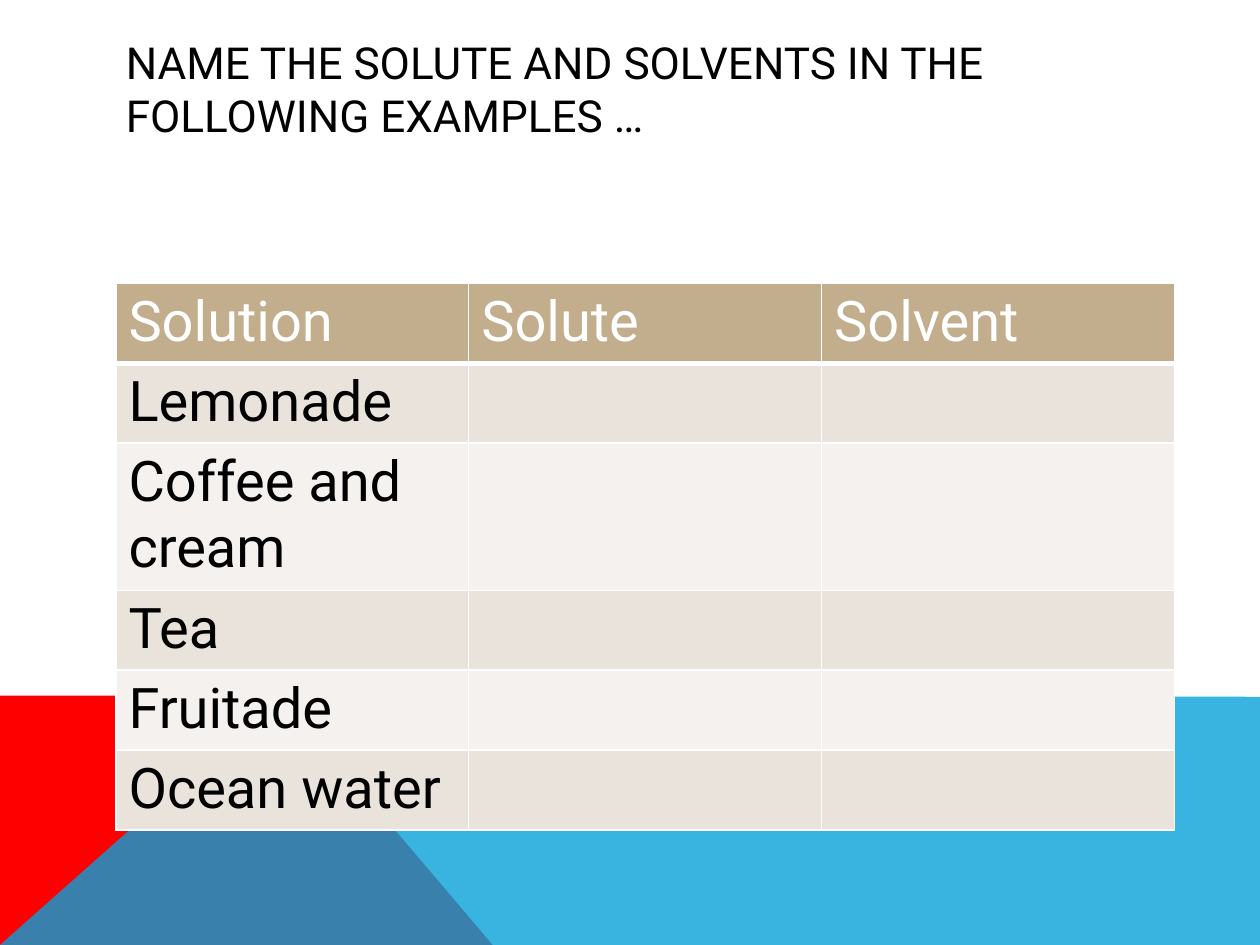
from lxml import etree
from pptx import Presentation
from pptx.dml.color import RGBColor
from pptx.enum.text import MSO_ANCHOR
from pptx.oxml.ns import qn
from pptx.util import Inches, Pt

FONT = "Roboto"
SOLUTIONS = ["Lemonade", "Coffee and cream", "Tea", "Fruitade", "Ocean water"]


def paint(color_format, hex_color):
    color_format.rgb = RGBColor.from_string(hex_color)


def style_text(text_frame, size, hex_color):
    for paragraph in text_frame.paragraphs:
        for run in paragraph.runs:
            run.font.name = FONT
            run.font.size = Pt(size)
            paint(run.font.color, hex_color)


def add_panel(slide, left, top, points, hex_color, opacity=None):
    """Draw a filled polygon; points are relative to left and top."""
    corners = [(Inches(left + x), Inches(top + y)) for x, y in points]
    builder = slide.shapes.build_freeform(*corners[0])
    builder.add_line_segments(corners[1:], close=True)
    panel = builder.convert_to_shape()
    panel.shadow.inherit = False
    panel.line.fill.background()
    panel.fill.solid()
    paint(panel.fill.fore_color, hex_color)
    if opacity is not None:
        color = panel.fill._xPr.find(".//" + qn("a:srgbClr"))
        etree.SubElement(color, qn("a:alpha"), val=str(opacity * 1000))


def add_footer_band(slide, left, top, width, height):
    fold = 2.23
    add_panel(slide, left, top,
              [(0, height), (0, 0), (fold, 0), (3.91, height)], "FF0000")
    add_panel(slide, left, top,
              [(0, height), (fold, 0), (width, 0.01), (width, height)],
              "08A1D9", opacity=80)


def add_title(slide, left, top, width, height):
    title = slide.shapes.add_textbox(
        Inches(left), Inches(top), Inches(width), Inches(height)).text_frame
    title.word_wrap = True
    title.vertical_anchor = MSO_ANCHOR.MIDDLE
    title.text = "NAME THE SOLUTE AND SOLVENTS IN THE FOLLOWING EXAMPLES …"
    style_text(title, 25.2, "000000")


def set_borders(cell, bottom_width):
    properties = cell._tc.get_or_add_tcPr()
    widths = {"lnL": 1, "lnR": 1, "lnT": 1, "lnB": bottom_width}
    for position, (side, width) in enumerate(widths.items()):
        line = etree.Element(qn("a:" + side), w=str(Pt(width)))
        fill = etree.SubElement(line, qn("a:solidFill"))
        etree.SubElement(fill, qn("a:srgbClr"), val="FFFFFF")
        properties.insert(position, line)  # borders come before the fill


def add_solutions_table(slide, left, top, width, row_height):
    rows = [["Solution", "Solute", "Solvent"]]
    rows += [[solution, "", ""] for solution in SOLUTIONS]
    table = slide.shapes.add_table(
        len(rows), 3, Inches(left), Inches(top),
        Inches(width), Inches(row_height * len(rows))).table
    for r, texts in enumerate(rows):
        header = r == 0
        background = "C2AD8D" if header else ("F4F1EE", "E9E3DB")[r % 2]
        for c, text in enumerate(texts):
            cell = table.cell(r, c)
            cell.fill.solid()
            paint(cell.fill.fore_color, background)
            set_borders(cell, bottom_width=3 if header else 1)
            if text:
                cell.text_frame.text = text
                style_text(cell.text_frame, 32,
                           "FFFFFF" if header else "000000")


def main():
    presentation = Presentation()
    presentation.slide_width = Inches(10)
    presentation.slide_height = Inches(7.5)
    slide = presentation.slides.add_slide(presentation.slide_layouts[6])

    # Coloured band at the foot, then the heading and the exercise
    add_footer_band(slide, 0, 5.52, 10, 1.98)
    add_title(slide, 0.9, 0.4, 8.22, 0.6)
    add_solutions_table(slide, 0.92, 2.25, 8.4, 0.41)

    presentation.save("out.pptx")


if __name__ == "__main__":
    main()
